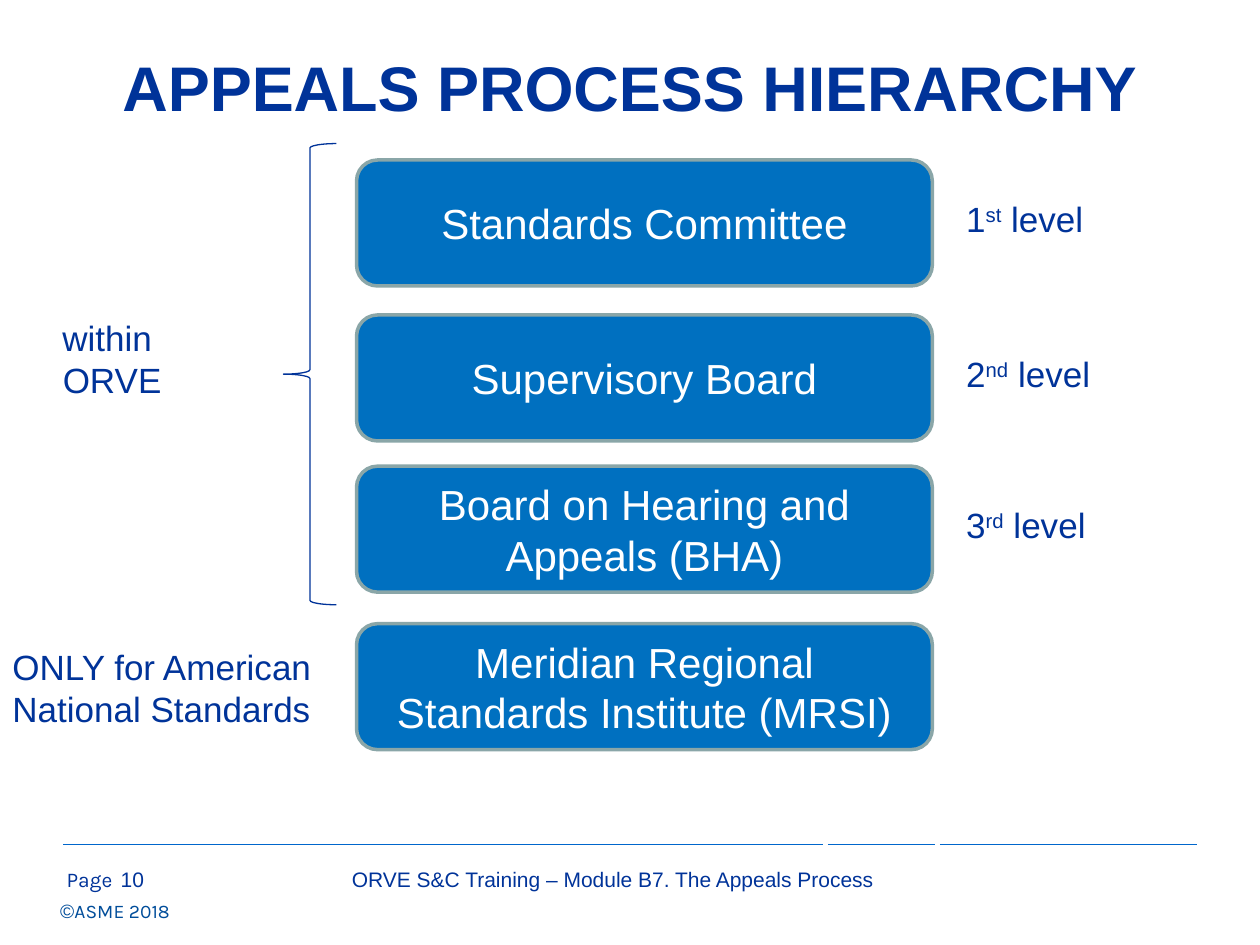
"""Build the appeals process hierarchy slide."""
import pptx
import pptx.util
import pptx.dml.color
import pptx.enum.shapes
import pptx.enum.text
import lxml.etree
from pptx.oxml.ns import qn

Inches, Pt = pptx.util.Inches, pptx.util.Pt
RGBColor = pptx.dml.color.RGBColor
ALIGN, ANCHOR = pptx.enum.text.PP_ALIGN, pptx.enum.text.MSO_ANCHOR
SHAPE = pptx.enum.shapes.MSO_SHAPE

NAVY = RGBColor(0x00, 0x33, 0x99)
COPYRIGHT_BLUE = RGBColor(0x00, 0x4D, 0x9A)
RULE_BLUE = RGBColor(0x00, 0x66, 0xCC)
BODY_BLUE = RGBColor(0x00, 0x70, 0xC0)
BORDER_GREY = RGBColor(0x8A, 0xA6, 0xA8)
WHITE = RGBColor(0xFF, 0xFF, 0xFF)

BODIES = [
    ("Standards Committee", 1.27, ("1", "st")),
    ("Supervisory Board", 2.5, ("2", "nd")),
    ("Board on Hearing and Appeals (BHA)", 3.7, ("3", "rd")),
    ("Meridian Regional Standards Institute (MRSI)", 4.95, None),
]
BODY_LEFT, BODY_WIDTH, BODY_HEIGHT = 2.83, 4.57, 1
LEVEL_LEFT, LEVEL_DROP = 7.57, 0.25
RULE_TOP = 6.7
RULE_SPANS = [(0.5, 6.53), (6.57, 7.42), (7.46, 9.5)]

TITLE = "APPEALS PROCESS HIERARCHY"
SCOPES = [
    (["within ", "ORVE"], (-0.26, 2.46, 2.3, 0.77), ALIGN.CENTER),
    (["ONLY for American National Standards"], (0, 5.07, 2.72, 0.77), ALIGN.LEFT),
]
FOOTERS = [
    ("Page", (0.43, 6.83, 2.33, 0.52), "Karla", ALIGN.LEFT),
    ("10", (0.86, 6.83, 0.47, 0.52), "Arial", ALIGN.LEFT),
    ("ORVE S&C Training – Module B7. The Appeals Process",
     (1.53, 6.83, 6.67, 0.52), "Arial", ALIGN.CENTER),
]


def add_run(paragraph, text, size, color=NAVY, face="Arial", bold=False):
    run = paragraph.add_run()
    run.text = text
    run.font.size = Pt(size)
    run.font.name = face
    run.font.bold = bold
    run.font.color.rgb = color
    return run


def add_text(slide, place, align=ALIGN.LEFT, anchor=ANCHOR.TOP, wrap=True):
    frame = slide.shapes.add_textbox(*map(Inches, place)).text_frame
    frame.word_wrap = wrap
    frame.vertical_anchor = anchor
    frame.paragraphs[0].alignment = align
    return frame


def add_rules(slide):
    for start, end in RULE_SPANS:
        rule = slide.shapes.add_connector(
            pptx.enum.shapes.MSO_CONNECTOR.STRAIGHT,
            Inches(start), Inches(RULE_TOP), Inches(end), Inches(RULE_TOP))
        rule.line.color.rgb = RULE_BLUE
        rule.line.width = Pt(0.75)
        lxml.etree.SubElement(rule._element.spPr, qn("a:effectLst"))


def add_body(slide, name, top, level):
    body = slide.shapes.add_shape(
        SHAPE.ROUNDED_RECTANGLE,
        *map(Inches, (BODY_LEFT, top, BODY_WIDTH, BODY_HEIGHT)))
    body.shadow.inherit = False
    body.fill.solid()
    body.fill.fore_color.rgb = BODY_BLUE
    body.line.color.rgb = BORDER_GREY
    body.line.width = Pt(2)
    body.text_frame.word_wrap = True
    body.text_frame.vertical_anchor = ANCHOR.MIDDLE
    paragraph = body.text_frame.paragraphs[0]
    paragraph.alignment = ALIGN.CENTER
    add_run(paragraph, name, 24, WHITE)
    if level:
        number, suffix = level
        frame = add_text(slide, (LEVEL_LEFT, top + LEVEL_DROP, 1.5, 0.44))
        paragraph = frame.paragraphs[0]
        add_run(paragraph, number, 20)
        ordinal = add_run(paragraph, suffix, 20)
        ordinal.font._element.set("baseline", "30000")
        add_run(paragraph, " level", 20)


def add_brace(slide):
    brace = slide.shapes.add_shape(
        SHAPE.LEFT_BRACE, *map(Inches, (2.25, 1.14, 0.42, 3.66)))
    brace.shadow.inherit = False
    brace.fill.background()
    brace.line.color.rgb = NAVY
    brace.line.width = Pt(0.75)


def main():
    deck = pptx.Presentation()
    deck.slide_width, deck.slide_height = Inches(10), Inches(7.5)
    slide = deck.slides.add_slide(deck.slide_layouts[6])

    add_rules(slide)
    title = add_text(slide, (0.5, 0.06, 9, 1.25), ALIGN.CENTER, ANCHOR.MIDDLE)
    add_run(title.paragraphs[0], TITLE, 36, bold=True)

    for text, place, face, align in FOOTERS:
        footer = add_text(slide, place, align)
        add_run(footer.paragraphs[0], text, 12, face=face)
    notice = add_text(slide, (0.38, 7.09, 1.1, 0.29), wrap=False)
    add_run(notice.paragraphs[0], "©", 11, COPYRIGHT_BLUE)
    add_run(notice.paragraphs[0], "ASME 2018", 11, COPYRIGHT_BLUE, "Karla")

    for name, top, level in BODIES:
        add_body(slide, name, top, level)
    add_brace(slide)

    for lines, place, align in SCOPES:
        scope = add_text(slide, place, align)
        for index, line in enumerate(lines):
            paragraph = scope.add_paragraph() if index else scope.paragraphs[0]
            paragraph.alignment = align
            add_run(paragraph, line, 20)

    deck.save("out.pptx")


if __name__ == "__main__":
    main()
